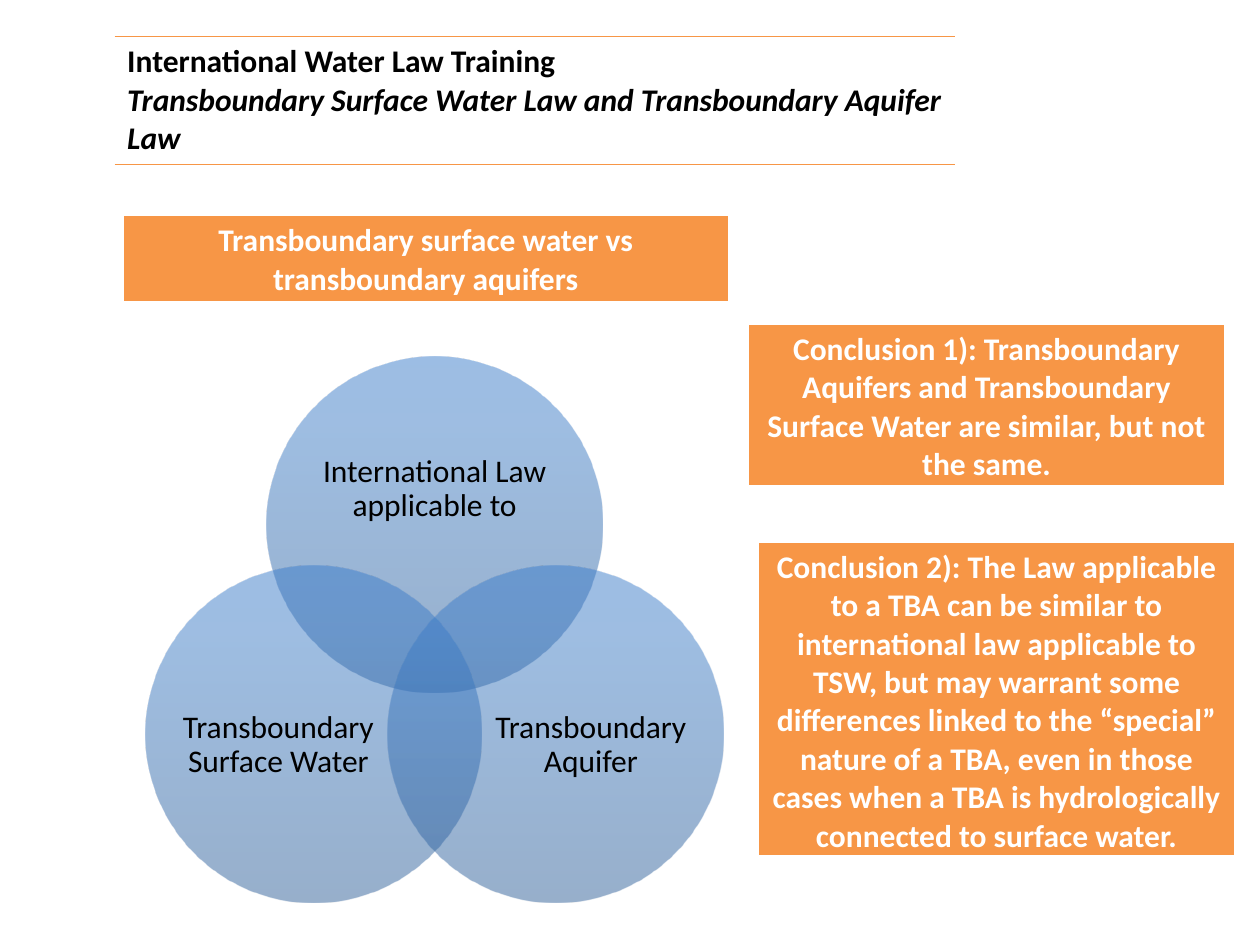
from lxml import etree
from pptx import Presentation
from pptx.dml.color import RGBColor
from pptx.enum.shapes import MSO_SHAPE as Shape
from pptx.enum.text import MSO_ANCHOR as Anchor, PP_ALIGN as Align
from pptx.oxml import parse_xml
from pptx.oxml.ns import nsdecls, qn
from pptx.util import Inches, Pt

ORANGE, WHITE, BLACK = "F79646", "FFFFFF", "000000"

# Content: heading lines as (text, italic)
HEADING = [
    ("International Water Law Training", False),
    ("Transboundary Surface Water Law and Transboundary Aquifer Law", True),
]
HEADING_BOX = (0.91, 0.29, 6.67, 1)

BANNERS = [
    ("Transboundary surface water vs transboundary aquifers",
     (0.98, 1.71, 4.8, 0.7)),
    ("Conclusion 1): Transboundary Aquifers and Transboundary Surface Water "
     "are similar, but not the same.", (5.94, 2.57, 3.78, 1.3)),
    ("Conclusion 2): The Law applicable to a TBA can be similar to "
     "international law applicable to TSW, but may warrant some differences "
     "linked to the “special” nature of a TBA, even in those cases when a TBA "
     "is hydrologically connected to surface water.", (6.02, 4.3, 3.78, 2.5)),
]

# Venn circles: label, column (-1, 0, 1), row (0, 1), in drawing order
CIRCLES = [
    ("International Law applicable to", 0, 0),
    ("Transboundary Aquifer", 1, 1),
    ("Transboundary Surface Water", -1, 1),
]
DIAMETER, AXIS, TOP = 2.67, 3.45, 2.83
STEP_X, STEP_Y = 0.96, 1.66
# Label offset from the circle's centre per column and row, and its size
LABEL_SHIFT = [(0, -0.28), (0.28, 0.09)]
LABEL_SIZE = [(1.96, 1.2), (1.6, 1.47)]
# Gradient stops: position in %, colour
STOPS = [(0, "2F5F99"), (80, "3D7CC7"), (100, "3A7CCB")]


def rgb(color):
    return RGBColor.from_string(color)


def add_text(p, text, color, bold=False, italic=False):
    r = p.add_run()
    r.text = text
    font = r.font
    font.name, font.size = "Calibri", Pt(18)
    font.bold, font.italic = bold, italic
    font.color.rgb = rgb(color)


def set_borders(cell, borders):
    """borders: side -> (colour, width in points); other sides get no line."""
    tc_pr = cell._tc.get_or_add_tcPr()
    for side in "LRTB":
        ln = etree.SubElement(tc_pr, qn(f"a:ln{side}"))
        if side in borders:
            color, width = borders[side]
            ln.set("w", str(Pt(width)))
            fill = etree.SubElement(ln, qn("a:solidFill"))
            etree.SubElement(fill, qn("a:srgbClr"), val=color)
        else:
            etree.SubElement(ln, qn("a:noFill"))


def add_cell(slide, box, borders, fill=None):
    table = slide.shapes.add_table(1, 1, *map(Inches, box)).table
    table.first_row = table.horz_banding = False
    cell = table.cell(0, 0)
    set_borders(cell, borders)
    if fill:
        cell.fill.solid()
        cell.fill.fore_color.rgb = rgb(fill)
    else:
        cell.fill.background()
    return cell


def set_gradient(sp):
    stops = "".join(
        f'<a:gs pos="{pos * 1000}"><a:srgbClr val="{color}">'
        '<a:alpha val="50000"/></a:srgbClr></a:gs>' for pos, color in STOPS)
    grad = parse_xml(
        f'<a:gradFill {nsdecls("a")} rotWithShape="1"><a:gsLst>{stops}</a:gsLst>'
        '<a:lin ang="16200000" scaled="0"/></a:gradFill>')
    sp._element.spPr.find(qn("a:prstGeom")).addnext(grad)


def add_circle(shapes, label, col, row):
    cx = AXIS + col * STEP_X
    cy = TOP + DIAMETER / 2 + row * STEP_Y
    sp = shapes.add_shape(Shape.OVAL, Inches(cx - DIAMETER / 2),
                          Inches(cy - DIAMETER / 2),
                          Inches(DIAMETER), Inches(DIAMETER))
    sp.shadow.inherit = False
    sp.line.fill.background()
    set_gradient(sp)

    # Label, shifted away from the overlaps
    (dx, dy), (w, h) = LABEL_SHIFT[row], LABEL_SIZE[row]
    tf = shapes.add_textbox(Inches(cx + col * dx - w / 2),
                            Inches(cy + dy - h / 2),
                            Inches(w), Inches(h)).text_frame
    tf.word_wrap = True
    tf.vertical_anchor = Anchor.MIDDLE
    tf.margin_left = tf.margin_right = tf.margin_top = tf.margin_bottom = 0
    p = tf.paragraphs[0]
    p.alignment, p.line_spacing = Align.CENTER, 0.9
    add_text(p, label, BLACK)


def main():
    prs = Presentation()
    prs.slide_width, prs.slide_height = Inches(10), Inches(7.5)
    slide = prs.slides.add_slide(prs.slide_layouts[6])

    # Heading between two rules
    tf = add_cell(slide, HEADING_BOX,
                  {"T": (ORANGE, 1), "B": (ORANGE, 1)}).text_frame
    for i, (text, italic) in enumerate(HEADING):
        p = tf.add_paragraph() if i else tf.paragraphs[0]
        add_text(p, text, BLACK, bold=True, italic=italic)

    # Venn diagram
    venn = slide.shapes.add_group_shape()
    for circle in CIRCLES:
        add_circle(venn.shapes, *circle)

    # Orange banners
    borders = {side: (WHITE, 3 if side == "B" else 1) for side in "LRTB"}
    for text, box in BANNERS:
        p = add_cell(slide, box, borders, ORANGE).text_frame.paragraphs[0]
        p.alignment = Align.CENTER
        add_text(p, text, WHITE, bold=True)

    prs.save("out.pptx")


if __name__ == "__main__":
    main()
